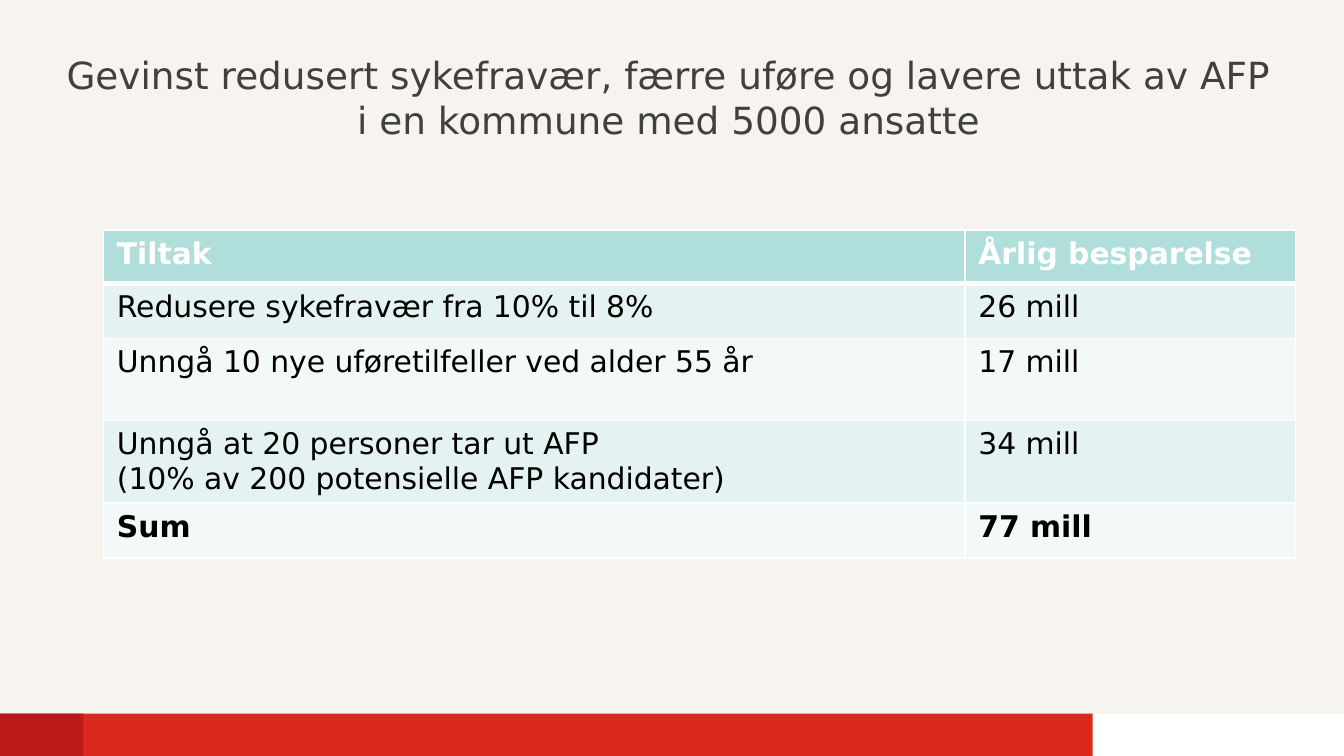
from lxml import etree
from pptx import Presentation
from pptx.dml.color import RGBColor
from pptx.enum import shapes, text
from pptx.oxml.ns import qn
from pptx.util import Inches, Pt

FONT = "DejaVu Sans"
SAND = RGBColor(0xF7, 0xF3, 0xEF)
RED = RGBColor(0xDA, 0x29, 0x1C)
DARK_RED = RGBColor(0xBB, 0x1B, 0x18)
WHITE = RGBColor(0xFF, 0xFF, 0xFF)
BLACK = RGBColor(0, 0, 0)
GREY = RGBColor(0x40, 0x40, 0x40)
TEAL = RGBColor(0xB0, 0xDF, 0xDB)
BANDS = [RGBColor(0xE4, 0xF3, 0xF1), RGBColor(0xF2, 0xF9, 0xF8)]

SLIDE_WIDTH = 10
SLIDE_HEIGHT = SLIDE_WIDTH * 9 / 16
FOOTER_TOP = 5.31

TITLE = "Gevinst redusert sykefravær, færre uføre og lavere uttak av AFP i en kommune med 5000 ansatte"
SAVINGS = [
    ("Tiltak", "Årlig besparelse"),
    ("Redusere sykefravær fra 10% til 8%", "26 mill"),
    ("Unngå 10 nye uføretilfeller ved alder 55 år", "17 mill"),
    ("Unngå at 20 personer tar ut AFP\n(10% av 200 potensielle AFP kandidater)", "34 mill"),
    ("Sum", "77 mill"),
]
COLUMN_WIDTHS = [6.41, 2.46]
ROW_HEIGHTS = [0.4, 0.41, 0.61, 0.61, 0.41]


def write_text(frame, content, size=16, color=BLACK, bold=False, align=None):
    """Fill a text frame, one paragraph per line of content."""
    frame.text = content
    for para in frame.paragraphs:
        para.alignment = align
        for span in para.runs:
            span.font.name = FONT
            span.font.size = Pt(size)
            span.font.bold = bold
            span.font.color.rgb = color


def add_bar(page, left, width, color):
    bar = page.shapes.add_shape(shapes.MSO_SHAPE.RECTANGLE, Inches(left), Inches(FOOTER_TOP),
                                Inches(width), Inches(SLIDE_HEIGHT - FOOTER_TOP))
    bar.shadow.inherit = False
    bar.fill.solid()
    bar.fill.fore_color.rgb = color
    bar.line.fill.background()


def set_title(page):
    title = page.shapes.title
    title.left, title.top = Inches(0.45), Inches(0.39)
    title.width, title.height = Inches(9.05), Inches(0.66)
    frame = title.text_frame
    frame.margin_left = frame.margin_right = 0
    frame.margin_top = frame.margin_bottom = 0
    frame.word_wrap = True
    frame.auto_size = text.MSO_AUTO_SIZE.NONE
    frame.vertical_anchor = text.MSO_ANCHOR.MIDDLE
    write_text(frame, TITLE, size=20, color=GREY, align=text.PP_ALIGN.CENTER)


def set_borders(cell, **widths):
    """Draw white cell borders; borders precede the fill in the cell XML."""
    properties = cell._tc.get_or_add_tcPr()
    for index, side in enumerate(("L", "R", "T", "B")):
        line = etree.Element(qn(f"a:ln{side}"), w=str(Pt(widths.get(side, 1))))
        fill = etree.SubElement(line, qn("a:solidFill"))
        etree.SubElement(fill, qn("a:srgbClr"), val=str(WHITE))
        properties.insert(index, line)


def add_savings_table(page):
    frame = page.shapes.add_table(len(SAVINGS), len(COLUMN_WIDTHS), Inches(0.77), Inches(1.71),
                                  Inches(sum(COLUMN_WIDTHS)), Inches(sum(ROW_HEIGHTS)))
    table = frame.table
    for column, width in zip(table.columns, COLUMN_WIDTHS):
        column.width = Inches(width)
    for number, (row, height) in enumerate(zip(table.rows, ROW_HEIGHTS)):
        row.height = Inches(height)
        header = number == 0
        total = number == len(SAVINGS) - 1
        for cell, content in zip(row.cells, SAVINGS[number]):
            cell.fill.solid()
            cell.fill.fore_color.rgb = TEAL if header else BANDS[(number - 1) % 2]
            # A thick rule separates the header from the first row
            set_borders(cell, B=3 if header else 1, T=3 if number == 1 else 1)
            write_text(cell.text_frame, content, bold=header or total,
                       color=WHITE if header else BLACK)


def main():
    deck = Presentation()
    deck.slide_width, deck.slide_height = Inches(SLIDE_WIDTH), Inches(SLIDE_HEIGHT)
    page = deck.slides.add_slide(deck.slide_layouts[5])
    page.background.fill.solid()
    page.background.fill.fore_color.rgb = SAND

    # Footer band
    add_bar(page, 0, 8.14, RED)
    add_bar(page, 8.13, 1.87, WHITE)
    add_bar(page, 0, 0.62, DARK_RED)

    # Content
    set_title(page)
    add_savings_table(page)
    deck.save("out.pptx")


if __name__ == "__main__":
    main()
